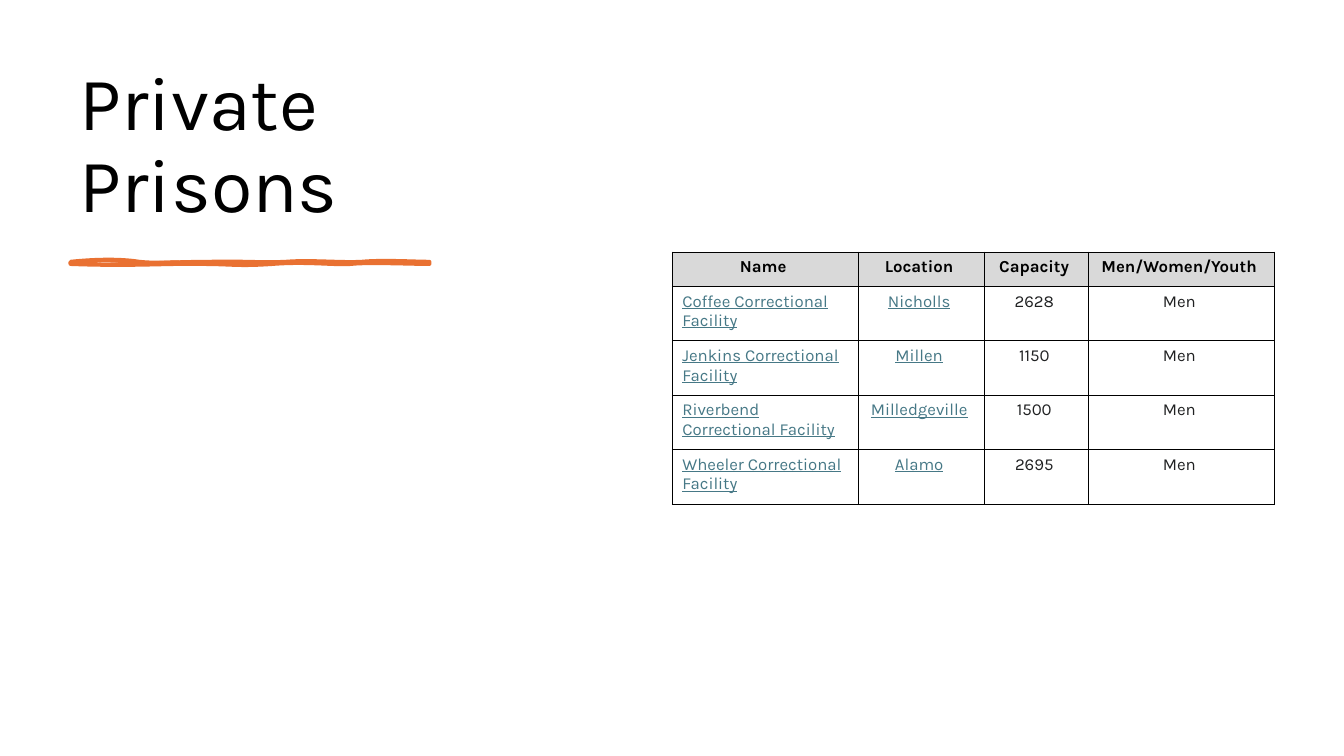
from lxml import etree
from pptx import Presentation
from pptx.dml.color import RGBColor
from pptx.enum.text import MSO_ANCHOR, PP_ALIGN
from pptx.oxml.ns import qn
from pptx.util import Cm, Pt

LEFT, CENTER = PP_ALIGN.LEFT, PP_ALIGN.CENTER
BOTTOM = MSO_ANCHOR.BOTTOM
FONT = "Karla"
COLORS = {"text": "000000", "link": "467886", "number": "202122",
          "header": "D9D9D9", "accent": "E97132"}

# Content
TITLE = "Private Prisons"
HEADERS = ["Name", "Location", "Capacity", "Men/Women/Youth"]
PRISONS = [
    ("Coffee Correctional Facility", "Nicholls", "2628", "Men"),
    ("Jenkins Correctional Facility", "Millen", "1150", "Men"),
    ("Riverbend Correctional Facility", "Milledgeville", "1500", "Men"),
    ("Wheeler Correctional Facility", "Alamo", "2695", "Men"),
]
HEADER_FORMAT = {"bold": True, "underline": False}
LINK_FORMAT = {"bold": False, "underline": True}
PLAIN_FORMAT = {"bold": False, "underline": False}
COLUMNS = [  # width in cm, alignment, body format, body colour
    (4.69, LEFT, LINK_FORMAT, "link"),
    (3.17, CENTER, LINK_FORMAT, "link"),
    (2.63, CENTER, PLAIN_FORMAT, "number"),
    (4.68, CENTER, PLAIN_FORMAT, "number"),
]
HEADER_HEIGHT, BODY_HEIGHT = 0.87, 1.37
TRAILING_SPACE = chr(160)

# Brush stroke in 0.1 mm: a start point, then two handles and an end per curve
STROKE_EDGE = [
    (178, 660),
    (246, 653), (307, 653), (351, 660),
    (394, 665), (450, 660), (531, 660),
    (612, 658), (660, 663), (721, 660),
    (782, 655), (861, 663), (912, 660),
    (963, 655), (1046, 660), (1082, 660),
    (1082, 660), (1082, 663), (1082, 665),
    (1036, 665), (925, 660), (884, 665),
    (843, 668), (772, 658), (686, 665),
    (597, 671), (587, 665), (505, 665),
    (422, 663), (335, 671), (178, 665),
    (178, 663), (178, 660), (178, 660),
]
STROKE_BODY = [
    (178, 660),
    (259, 665), (279, 660), (351, 660),
    (422, 658), (429, 653), (505, 660),
    (579, 665), (663, 663), (704, 660),
    (744, 655), (831, 665), (874, 660),
    (919, 653), (1008, 668), (1082, 660),
    (1082, 660), (1082, 663), (1082, 665),
    (1046, 663), (945, 671), (902, 665),
    (859, 658), (785, 665), (704, 665),
    (620, 663), (610, 660), (549, 665),
    (490, 668), (455, 663), (368, 665),
    (282, 665), (234, 663), (178, 665),
    (178, 663), (178, 660), (178, 660),
]
STROKE_UNIT = Cm(0.01)


def color(name):
    return RGBColor.from_string(COLORS[name])


def write(paragraph, text, size, color_name, formats):
    run = paragraph.add_run()
    run.text = text
    run.font.name, run.font.size = FONT, Pt(size)
    run.font.color.rgb = color(color_name)
    for attribute, value in formats.items():
        setattr(run.font, attribute, value)


def add_contour(contours, points, size, **paint):
    left, top = STROKE_EDGE[0]
    contour = etree.SubElement(contours, qn("a:path"), **size, **paint)

    def add_step(tag, step_points):
        step = etree.SubElement(contour, qn(tag))
        for x, y in step_points:
            etree.SubElement(step, qn("a:pt"), x=str(x - left), y=str(y - top))

    add_step("a:moveTo", points[:1])
    for i in range(1, len(points), 3):
        add_step("a:cubicBezTo", points[i:i + 3])
    etree.SubElement(contour, qn("a:close"))


def add_stroke(slide):
    knots = STROKE_EDGE[::3]
    builder = slide.shapes.build_freeform(*knots[0], scale=float(STROKE_UNIT))
    builder.add_line_segments(knots[1:], close=True)
    stroke = builder.convert_to_shape()
    stroke.shadow.inherit = False
    stroke.fill.solid()
    stroke.fill.fore_color.rgb = stroke.line.color.rgb = color("accent")
    stroke.line.width = Pt(3)
    etree.SubElement(stroke.line._get_or_add_ln(), qn("a:round"))

    # Curved contours: one outlined, one filled
    contours = stroke._element.find(".//" + qn("a:pathLst"))
    size = {key: contours[0].get(key) for key in ("w", "h")}
    contours.remove(contours[0])
    add_contour(contours, STROKE_EDGE, size, fill="none")
    add_contour(contours, STROKE_BODY, size, stroke="0")


def add_borders(cell):
    properties = cell._tc.get_or_add_tcPr()
    for position, side in enumerate(("lnL", "lnR", "lnT", "lnB")):
        border = etree.Element(qn(f"a:{side}"), w=str(Pt(0.75)))
        fill = etree.SubElement(border, qn("a:solidFill"))
        etree.SubElement(fill, qn("a:srgbClr"), val=COLORS["text"])
        properties.insert(position, border)


def add_prison_table(slide):
    table = slide.shapes.add_table(
        len(PRISONS) + 1, len(COLUMNS), Cm(16.94), Cm(6.35),
        Cm(sum(column[0] for column in COLUMNS)),
        Cm(HEADER_HEIGHT + BODY_HEIGHT * len(PRISONS))).table
    table.horz_banding = False
    for c, (width, alignment, body_format, body_color) in enumerate(COLUMNS):
        table.columns[c].width = Cm(width)
        for r, row in enumerate([HEADERS, *PRISONS]):
            table.rows[r].height = Cm(BODY_HEIGHT if r else HEADER_HEIGHT)
            cell = table.cell(r, c)
            paragraph = cell.text_frame.paragraphs[0]
            paragraph.alignment = alignment if r else CENTER
            if r == 0:
                cell.fill.solid()
                cell.fill.fore_color.rgb = color("header")
                write(paragraph, row[c] + TRAILING_SPACE, 12, "text", HEADER_FORMAT)
            else:
                cell.fill.background()
                if body_format is LINK_FORMAT:
                    write(paragraph, row[c], 12, body_color, body_format)
                    write(paragraph, TRAILING_SPACE, 12, "text", PLAIN_FORMAT)
                else:
                    write(paragraph, row[c] + TRAILING_SPACE, 12, body_color, body_format)
            add_borders(cell)


def main():
    deck = Presentation()
    deck.slide_width, deck.slide_height = Cm(33.87), Cm(19.05)
    slide = deck.slides.add_slide(deck.slide_layouts[6])

    # Title
    title = slide.shapes.add_textbox(Cm(1.76), Cm(1.78), Cm(13.39), Cm(4.11)).text_frame
    title.word_wrap, title.vertical_anchor = True, BOTTOM
    title.paragraphs[0].line_spacing = 0.9
    write(title.paragraphs[0], TITLE, 54, "text", PLAIN_FORMAT)

    # Brush stroke under the title, then the table
    add_stroke(slide)
    add_prison_table(slide)
    deck.save("out.pptx")


if __name__ == "__main__":
    main()
